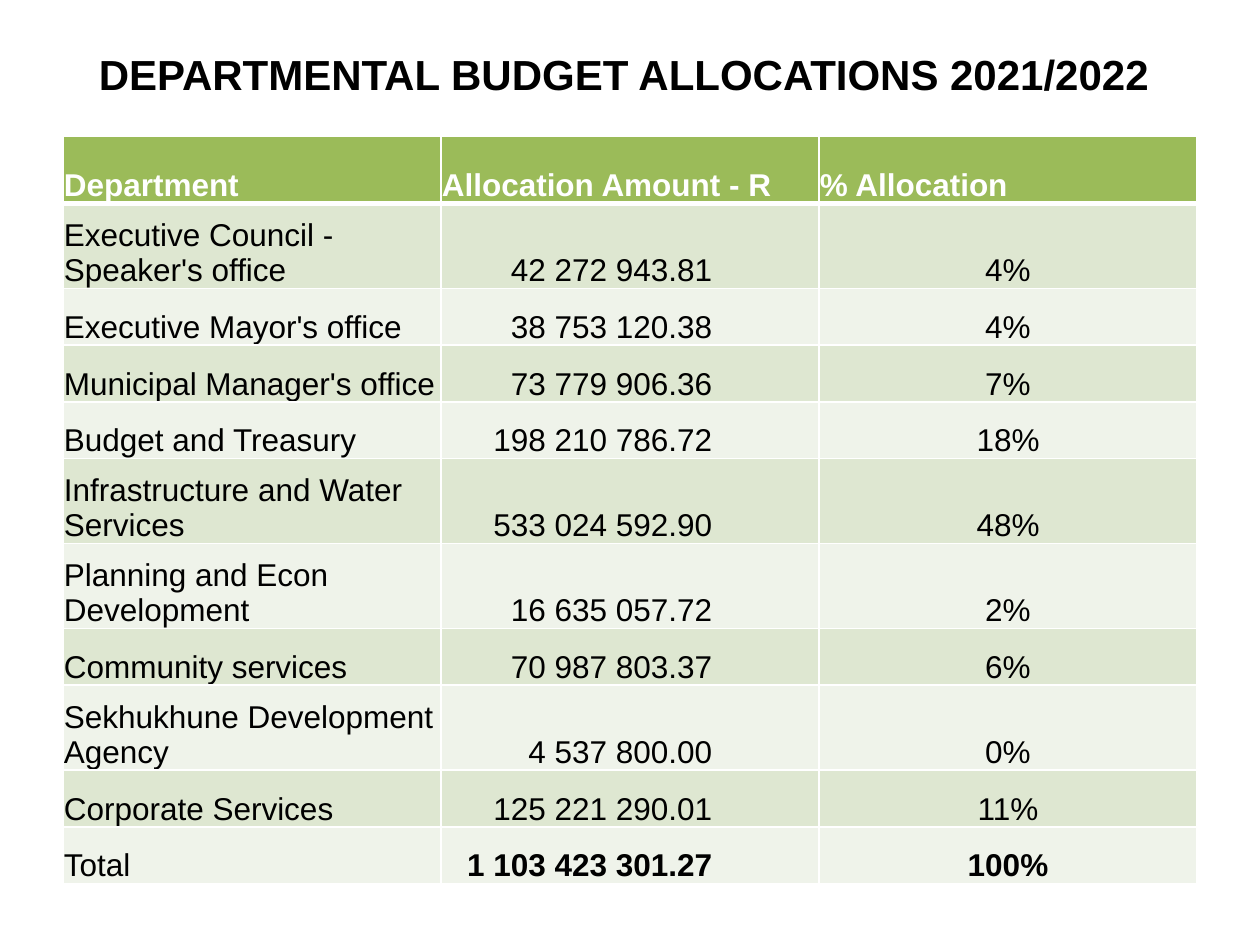
import pptx
import pptx.dml.color
import pptx.enum.text
import pptx.oxml
import pptx.oxml.ns
import pptx.util

Pt = pptx.util.Pt
ALIGN = pptx.enum.text.PP_ALIGN
ANCHOR = pptx.enum.text.MSO_ANCHOR

COLORS = {
    "header": "9BBB59",
    "odd": "DEE7D1",
    "even": "EFF3EA",
    "white": "FFFFFF",
    "text": "000000",
}

HEADERS = ["Department", "Allocation Amount - R", "% Allocation"]
ALLOCATIONS = [
    ("Executive Council - Speaker's office", "42 272 943.81", "4%"),
    ("Executive Mayor's office", "38 753 120.38", "4%"),
    ("Municipal Manager's office", "73 779 906.36", "7%"),
    ("Budget and Treasury", "198 210 786.72", "18%"),
    ("Infrastructure and Water Services", "533 024 592.90", "48%"),
    ("Planning and Econ Development", "16 635 057.72", "2%"),
    ("Community services", "70 987 803.37", "6%"),
    ("Sekhukhune Development Agency", "4 537 800.00", "0%"),
    ("Corporate Services", "125 221 290.01", "11%"),
    ("Total", "1 103 423 301.27", "100%"),
]
HEADER_HEIGHT, ONE_LINE, TWO_LINES = 38.2, 32.4, 48.6
TWO_LINE_ROWS = {1, 5, 6, 8}
AMOUNT_INSET = 61


def rgb(name):
    return pptx.dml.color.RGBColor.from_string(COLORS[name])


class SlideBuilder:
    def __init__(self, slide, font="Arial"):
        self.slide = slide
        self.font = font

    def style(self, p, size, color, bold, align):
        p.alignment = align
        for r in p.runs:
            r.font.name = self.font
            r.font.size = Pt(size)
            r.font.bold = bold
            r.font.color.rgb = rgb(color)

    def title(self, text, left, top, width, height):
        sp = self.slide.shapes.add_textbox(Pt(left), Pt(top), Pt(width), Pt(height))
        tf = sp.text_frame
        tf.word_wrap = True
        tf.vertical_anchor = ANCHOR.TOP
        tf.margin_top = Pt(6.4)
        tf.margin_right = Pt(14)
        tf.text = text
        self.style(tf.paragraphs[0], 24, "text", True, ALIGN.CENTER)

    def borders(self, cell, top, bottom):
        """Draw white cell borders; top and bottom are widths in points."""
        tc_pr = cell._tc.get_or_add_tcPr()
        widths = {"lnL": 1, "lnR": 1, "lnT": top, "lnB": bottom}
        for i, (tag, width) in enumerate(widths.items()):
            tc_pr.insert(i, pptx.oxml.parse_xml(
                f'<a:{tag} {pptx.oxml.ns.nsdecls("a")} w="{Pt(width)}"><a:solidFill>'
                f'<a:srgbClr val="{COLORS["white"]}"/></a:solidFill></a:{tag}>'))

    def cell(self, cell, text, fill, color, bold, align, right_inset):
        cell.text = text
        cell.vertical_anchor = ANCHOR.BOTTOM
        cell.margin_left = cell.margin_top = Pt(0.5)
        cell.margin_right = Pt(right_inset)
        cell.margin_bottom = Pt(0)
        cell.fill.solid()
        cell.fill.fore_color.rgb = rgb(fill)
        self.style(cell.text_frame.paragraphs[0], 18, color, bold, align)

    def table(self, rows, heights, left, top, width):
        columns = len(rows[0])
        frame = self.slide.shapes.add_table(
            len(rows), columns, Pt(left), Pt(top), Pt(width), Pt(sum(heights)))
        table = frame.table
        for column in table.columns:
            column.width = Pt(width / columns)
        aligns = [ALIGN.LEFT, ALIGN.RIGHT, ALIGN.CENTER]
        for i, (row, height) in enumerate(zip(rows, heights)):
            table.rows[i].height = Pt(height)
            header, total = i == 0, i == len(rows) - 1
            fill = "header" if header else "odd" if i % 2 else "even"
            for j, text in enumerate(row):
                cell = table.cell(i, j)
                self.cell(
                    cell, text, fill,
                    color="white" if header else "text",
                    bold=header or (total and j > 0),
                    align=ALIGN.LEFT if header else aligns[j],
                    right_inset=AMOUNT_INSET if j == 1 and not header else 0.5)
                self.borders(cell, top=3 if i == 1 else 1, bottom=3 if header else 1)


def main():
    prs = pptx.Presentation()
    prs.slide_width, prs.slide_height = Pt(720), Pt(540)
    s = SlideBuilder(prs.slides.add_slide(prs.slide_layouts[6]))
    s.title("DEPARTMENTAL BUDGET ALLOCATIONS 2021/2022", 36, 21.6, 648, 50.4)
    rows = [HEADERS, *ALLOCATIONS]
    heights = [HEADER_HEIGHT] + [
        TWO_LINES if i in TWO_LINE_ROWS else ONE_LINE for i in range(1, len(rows))]
    s.table(rows, heights, 36, 78, 648)
    prs.save("out.pptx")


if __name__ == "__main__":
    main()
